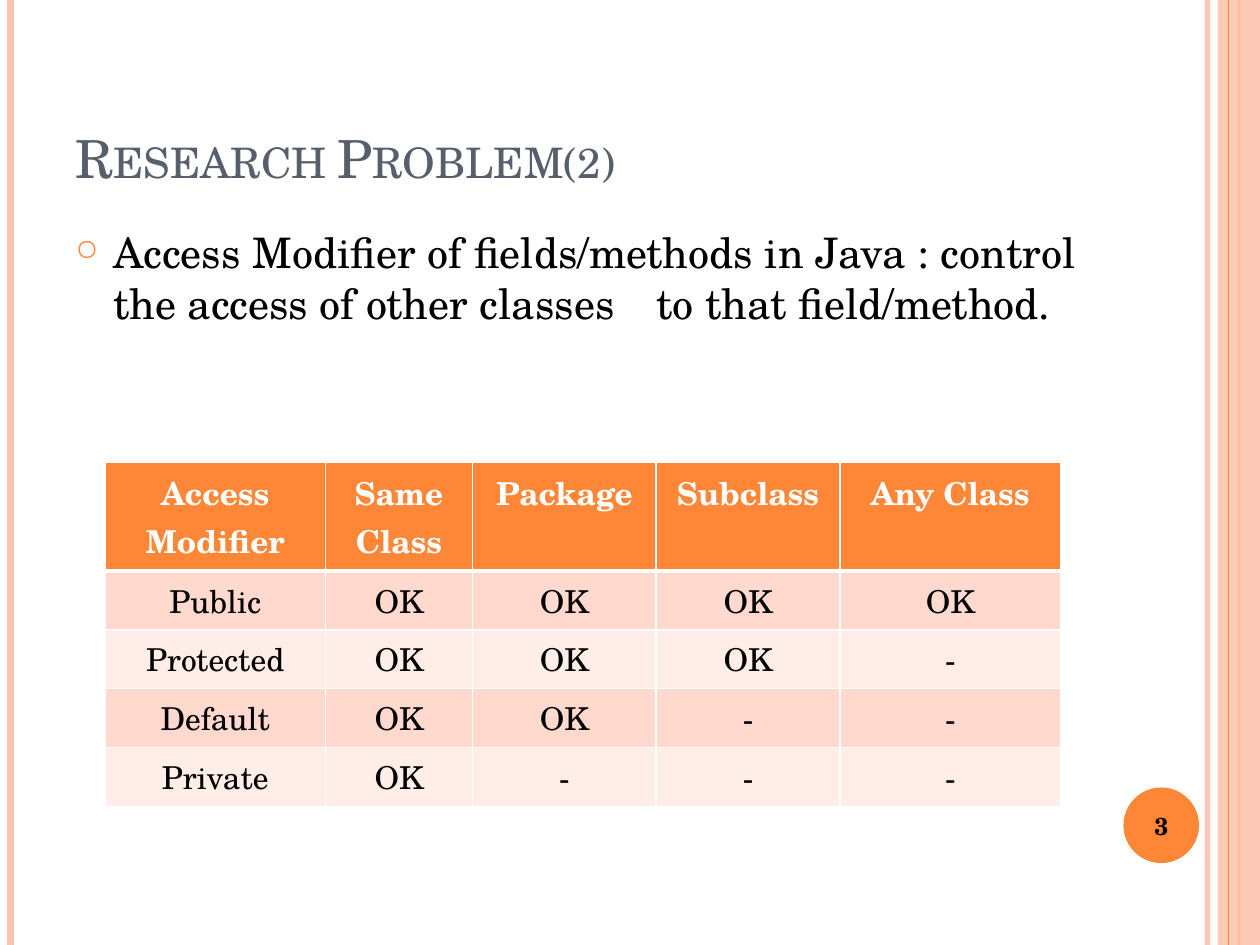
from dataclasses import dataclass

from lxml.etree import SubElement
from pptx import Presentation
from pptx.dml.color import RGBColor
from pptx.enum.shapes import MSO_CONNECTOR, MSO_SHAPE
from pptx.enum.text import MSO_ANCHOR, MSO_AUTO_SIZE, PP_ALIGN
from pptx.oxml.ns import qn
from pptx.util import Inches, Pt

COLUMNS, ROWS = 120, 90  # square grid, twelve units to the inch


@dataclass(frozen=True)
class Theme:
    font: str = "TeX Gyre Schola"
    accent: str = "FE8637"
    stripe: str = "FEC3AE"
    heading: str = "575F6D"
    ink: str = "000000"
    paper: str = "FFFFFF"
    bands: tuple = ("FFD9CE", "FFEDE8")
    title_size: int = 30
    body_size: int = 24
    table_size: int = 18
    number_size: int = 14


THEME = Theme()

ACCESS_TABLE = [
    ["Access Modifier", "Same Class", "Package", "Subclass", "Any Class"],
    ["Public", "OK", "OK", "OK", "OK"],
    ["Protected", "OK", "OK", "OK", "-"],
    ["Default", "OK", "OK", "-", "-"],
    ["Private", "OK", "-", "-", "-"],
]


def grid(units):
    return Inches(units / 12)


def place(box):
    return [grid(units) for units in box]


def add_run(paragraph, text, size, color, bold=False):
    run = paragraph.add_run()
    run.text = text
    font = run.font
    font.name, font.size, font.bold = THEME.font, Pt(size), bold
    font.color.rgb = RGBColor.from_string(color)
    return run


def set_alpha(fill_parent, percent):
    color = next(fill_parent.iter(qn("a:srgbClr")))
    SubElement(color, qn("a:alpha"), val=str(percent * 1000))


def add_stripe(slide, column, color, width, alpha=None):
    stripe = slide.shapes.add_connector(
        MSO_CONNECTOR.STRAIGHT, grid(column), 0, grid(column), grid(ROWS))
    stripe.line.color.rgb = RGBColor.from_string(color)
    stripe.line.width = Pt(width)
    properties = stripe._element.spPr
    if alpha:
        set_alpha(properties, alpha)
    SubElement(properties, qn("a:effectLst"))


def add_block(slide, preset, box, color):
    block = slide.shapes.add_shape(preset, *place(box))
    block.shadow.inherit = False
    block.fill.solid()
    block.fill.fore_color.rgb = RGBColor.from_string(color)
    block.line.fill.background()
    return block


def add_frame(slide):
    # Stripes along both edges, with a translucent band on the right
    add_stripe(slide, 115, THEME.stripe, 3, alpha=93)
    add_stripe(slide, 1, THEME.stripe, 4.5)
    add_stripe(slide, 118, THEME.accent, 1.5)
    band = add_block(slide, MSO_SHAPE.RECTANGLE, (116, 0, 4, ROWS), THEME.stripe)
    set_alpha(band._element.spPr, 87)
    add_stripe(slide, 117, THEME.accent, 0.75)


def add_title(slide, box, text):
    title = slide.shapes.title
    title.left, title.top, title.width, title.height = place(box)
    frame = title.text_frame
    frame.auto_size = MSO_AUTO_SIZE.NONE
    frame.vertical_anchor = MSO_ANCHOR.BOTTOM
    paragraph = frame.paragraphs[0]
    paragraph.alignment = PP_ALIGN.LEFT
    run = add_run(paragraph, text, THEME.title_size, THEME.heading)
    run.font._element.set("cap", "small")


def add_statement(slide, box, text):
    frame = slide.shapes.add_textbox(*place(box)).text_frame
    frame.word_wrap = True
    paragraph = frame.paragraphs[0]
    paragraph.space_before = Pt(6)
    # Hollow round bullet with a hanging indent
    properties = paragraph._p.get_or_add_pPr()
    properties.set("marL", str(Inches(0.3)))
    properties.set("indent", str(Inches(-0.3)))
    bullet_color = SubElement(properties, qn("a:buClr"))
    SubElement(bullet_color, qn("a:srgbClr"), val=THEME.accent)
    SubElement(properties, qn("a:buSzPct"), val="70000")
    SubElement(properties, qn("a:buChar"), char="○")
    add_run(paragraph, text, THEME.body_size, THEME.ink)


def set_borders(cell, **widths):
    properties = cell._tc.get_or_add_tcPr()
    for index, (side, width) in enumerate(widths.items()):
        border = properties.makeelement(qn(f"a:ln{side}"), {"w": str(Pt(width))})
        fill = SubElement(border, qn("a:solidFill"))
        SubElement(fill, qn("a:srgbClr"), val=THEME.paper)
        properties.insert(index, border)


def add_access_table(slide, box, column_widths, row_heights):
    table = slide.shapes.add_table(
        len(row_heights), len(column_widths), *place(box)).table
    for column, width in zip(table.columns, column_widths):
        column.width = grid(width)
    for row, height in zip(table.rows, row_heights):
        row.height = grid(height)
    for r, labels in enumerate(ACCESS_TABLE):
        header = r == 0
        fill = THEME.accent if header else THEME.bands[(r - 1) % 2]
        for c, label in enumerate(labels):
            cell = table.cell(r, c)
            cell.fill.solid()
            cell.fill.fore_color.rgb = RGBColor.from_string(fill)
            set_borders(cell, L=1, R=1, T=3 if r == 1 else 1, B=3 if header else 1)
            paragraph = cell.text_frame.paragraphs[0]
            paragraph.alignment = PP_ALIGN.CENTER
            add_run(paragraph, label, THEME.table_size,
                    THEME.paper if header else THEME.ink, bold=header)


def add_page_number(slide, disc_box, number_box, number):
    add_block(slide, MSO_SHAPE.OVAL, disc_box, THEME.accent)
    frame = slide.shapes.add_textbox(*place(number_box)).text_frame
    frame.word_wrap = True
    frame.vertical_anchor = MSO_ANCHOR.MIDDLE
    paragraph = frame.paragraphs[0]
    paragraph.alignment = PP_ALIGN.CENTER
    add_run(paragraph, number, THEME.number_size, THEME.ink, bold=True)


def main():
    deck = Presentation()
    deck.slide_width, deck.slide_height = grid(COLUMNS), grid(ROWS)
    slide = deck.slides.add_slide(deck.slide_layouts[5])
    add_frame(slide)
    add_title(slide, (6, 3.6, 98, 15), "Research Problem(2)")
    add_statement(
        slide, (6, 21, 98, 64),
        "Access Modifier of fields/methods in Java : control the access of "
        "other classes　to that field/method.")
    add_access_table(slide, (10, 44, 91, 32.8),
                     column_widths=[21, 14, 17.5, 17.5, 21],
                     row_heights=[10.4] + [5.6] * 4)
    add_page_number(slide, (107, 75, 7.2, 7.2), (106.6, 75.2, 8, 6.8), "3")
    deck.save("out.pptx")


if __name__ == "__main__":
    main()
